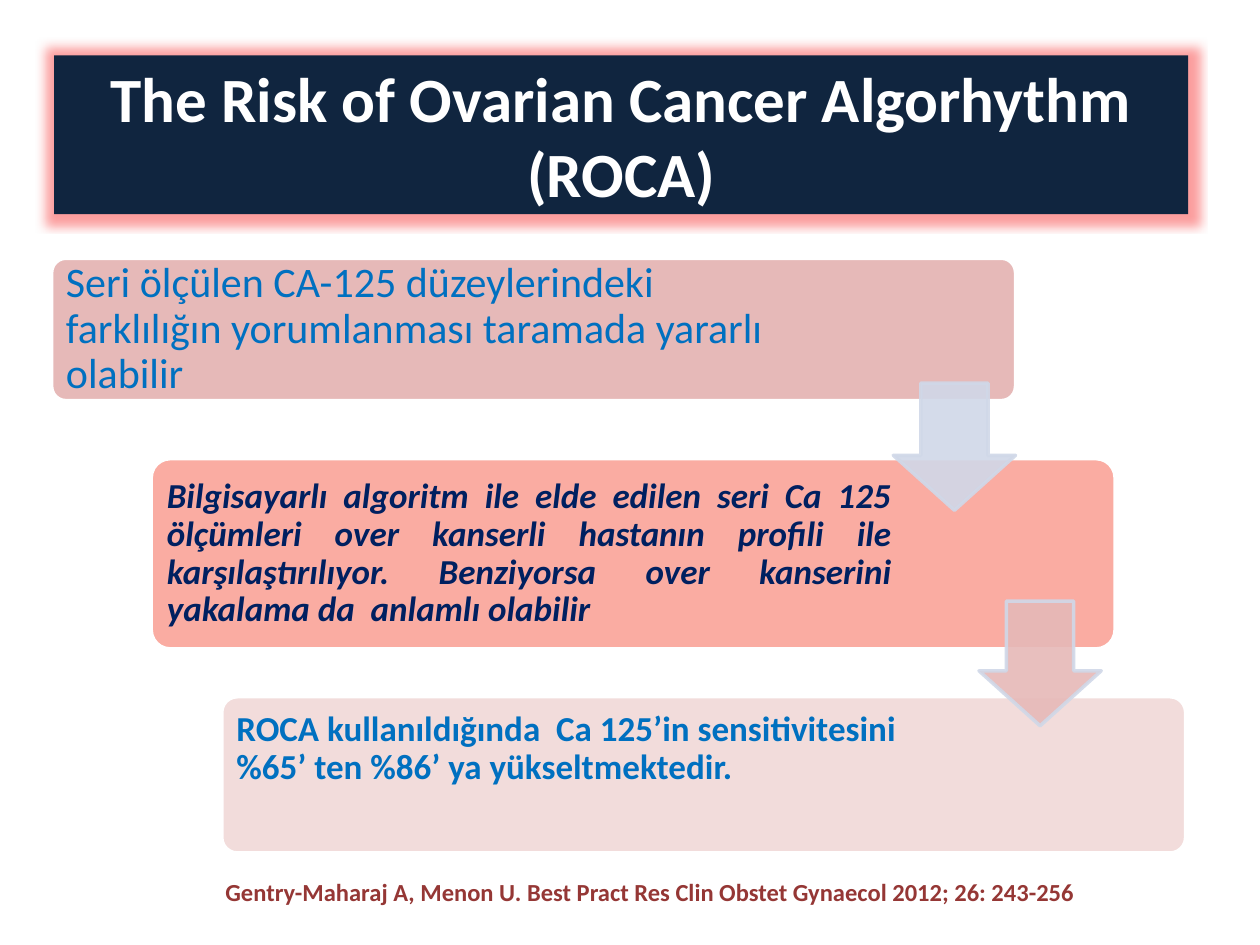
from dataclasses import dataclass

from lxml import etree
from pptx import Presentation, util as u
from pptx.dml.color import RGBColor
from pptx.enum import shapes, text
from pptx.oxml.ns import qn


@dataclass(frozen=True)
class Theme:
    """Colours, type sizes and font of the slide."""
    font: str = "Calibri"
    navy: str = "10253F"
    white: str = "FFFFFF"
    glow: str = "F95050"
    blue: str = "0070C0"
    ink: str = "002060"
    rose: str = "E6B9B8"
    salmon: str = "FAACA2"
    blush: str = "F2DCDB"
    mist: str = "D0D8E8"
    brick: str = "953735"
    title_size: int = 36
    lead_size: int = 24
    step_size: int = 20
    source_size: int = 14


THEME = Theme()
CARD_WIDTH = 7.65
ARROW_WIDTH = 0.97
ARROW_ROOM = 1.73


def inches(box):
    """Turn a box in inches into lengths."""
    return [u.Inches(value) for value in box]


def write(frame, words, size, colour, align=text.PP_ALIGN.LEFT, bold=True, italic=False):
    """Write one formatted paragraph and return it."""
    frame.word_wrap = True
    frame.auto_size = text.MSO_AUTO_SIZE.NONE
    frame.vertical_anchor = text.MSO_ANCHOR.MIDDLE
    paragraph = frame.paragraphs[0]
    paragraph.text = words
    paragraph.alignment = align
    font = paragraph.font
    font.name, font.size = THEME.font, u.Pt(size)
    font.bold, font.italic = bold, italic
    font.color.rgb = RGBColor.from_string(colour)
    return paragraph


def paint(shape, fill, line):
    """Give a shape a flat fill and a two point outline."""
    shape.shadow.inherit = False
    shape.fill.solid()
    shape.fill.fore_color.rgb = RGBColor.from_string(fill)
    shape.line.color.rgb = RGBColor.from_string(line)
    shape.line.width = u.Pt(2)


def add_title(slide, box, words):
    """Fill the title placeholder as a glowing banner."""
    title = slide.shapes.title
    title.left, title.top, title.width, title.height = inches(box)
    title.fill.solid()
    title.fill.fore_color.rgb = RGBColor.from_string(THEME.navy)
    write(title.text_frame, words, THEME.title_size, THEME.white, text.PP_ALIGN.CENTER)
    effects = etree.SubElement(title._element.spPr, qn("a:effectLst"))
    glow = etree.SubElement(effects, qn("a:glow"), rad=str(u.Pt(11)))
    colour = etree.SubElement(glow, qn("a:srgbClr"), val=THEME.glow)
    etree.SubElement(colour, qn("a:alpha"), val="55000")


def add_step(slide, box, fill, words, anchor=text.MSO_ANCHOR.MIDDLE, **style):
    """Add a rounded step card that leaves room for arrows on its right."""
    card = slide.shapes.add_shape(shapes.MSO_SHAPE.ROUNDED_RECTANGLE, *inches(box))
    card.adjustments[0] = 0.1
    paint(card, fill, THEME.white)
    frame = card.text_frame
    frame.margin_left = frame.margin_top = frame.margin_bottom = u.Inches(0.08)
    frame.margin_right = u.Inches(ARROW_ROOM)
    write(frame, words, **style).line_spacing = 0.9
    frame.vertical_anchor = anchor


def add_arrow(slide, box, fill):
    """Add a slightly transparent arrow between two steps."""
    arrow = slide.shapes.add_shape(shapes.MSO_SHAPE.DOWN_ARROW, *inches(box))
    arrow.adjustments[0], arrow.adjustments[1] = 0.55, 0.45
    paint(arrow, fill, THEME.mist)
    for colour in arrow._element.spPr.iter(qn("a:srgbClr")):
        etree.SubElement(colour, qn("a:alpha"), val="90000")


def add_steps(slide):
    """Place the staircase of cards, then the arrows over it."""
    lead = dict(size=THEME.lead_size, colour=THEME.blue, bold=False)
    detail = dict(size=THEME.step_size, colour=THEME.ink, italic=True,
                  align=text.PP_ALIGN.JUSTIFY)
    result = dict(size=THEME.step_size, colour=THEME.blue, anchor=text.MSO_ANCHOR.TOP)
    steps = [
        (0.41, 2.05, 1.13, THEME.rose, lead,
         "Seri ölçülen CA-125 düzeylerindeki farklılığın yorumlanması "
         "taramada yararlı olabilir"),
        (1.2, 3.64, 1.51, THEME.salmon, detail,
         "Bilgisayarlı algoritm ile elde edilen seri Ca 125 ölçümleri over kanserli "
         "hastanın profili ile karşılaştırılıyor. Benziyorsa over kanserini "
         "yakalama da  anlamlı olabilir"),
        (1.76, 5.53, 1.24, THEME.blush, result,
         "ROCA kullanıldığında  Ca 125’in sensitivitesini %65’ ten %86’ ya "
         "yükseltmektedir."),
    ]
    for left, top, height, fill, style, words in steps:
        add_step(slide, (left, top, CARD_WIDTH, height), fill, words, **style)
    for left, top, height, fill in [(7.09, 3.04, 1.01, THEME.mist),
                                    (7.77, 4.77, 0.99, THEME.rose)]:
        add_arrow(slide, (left, top, ARROW_WIDTH, height), fill)


def add_source(slide, box, words):
    """Add the literature reference."""
    source = slide.shapes.add_textbox(*inches(box))
    write(source.text_frame, words, THEME.source_size, THEME.brick)


def main():
    """Build and save the slide."""
    deck = Presentation()
    deck.slide_width, deck.slide_height = u.Inches(10), u.Inches(7.5)
    slide = deck.slides.add_slide(deck.slide_layouts.get_by_name("Title Only"))
    add_title(slide, (0.43, 0.44, 9, 1.26), "The Risk of Ovarian Cancer Algorhythm (ROCA)")
    add_steps(slide)
    add_source(slide, (1.69, 6.66, 7.72, 0.84),
               "Gentry-Maharaj A, Menon U. Best Pract Res Clin Obstet Gynaecol "
               "2012; 26: 243-256")
    deck.save("out.pptx")


if __name__ == "__main__":
    main()
